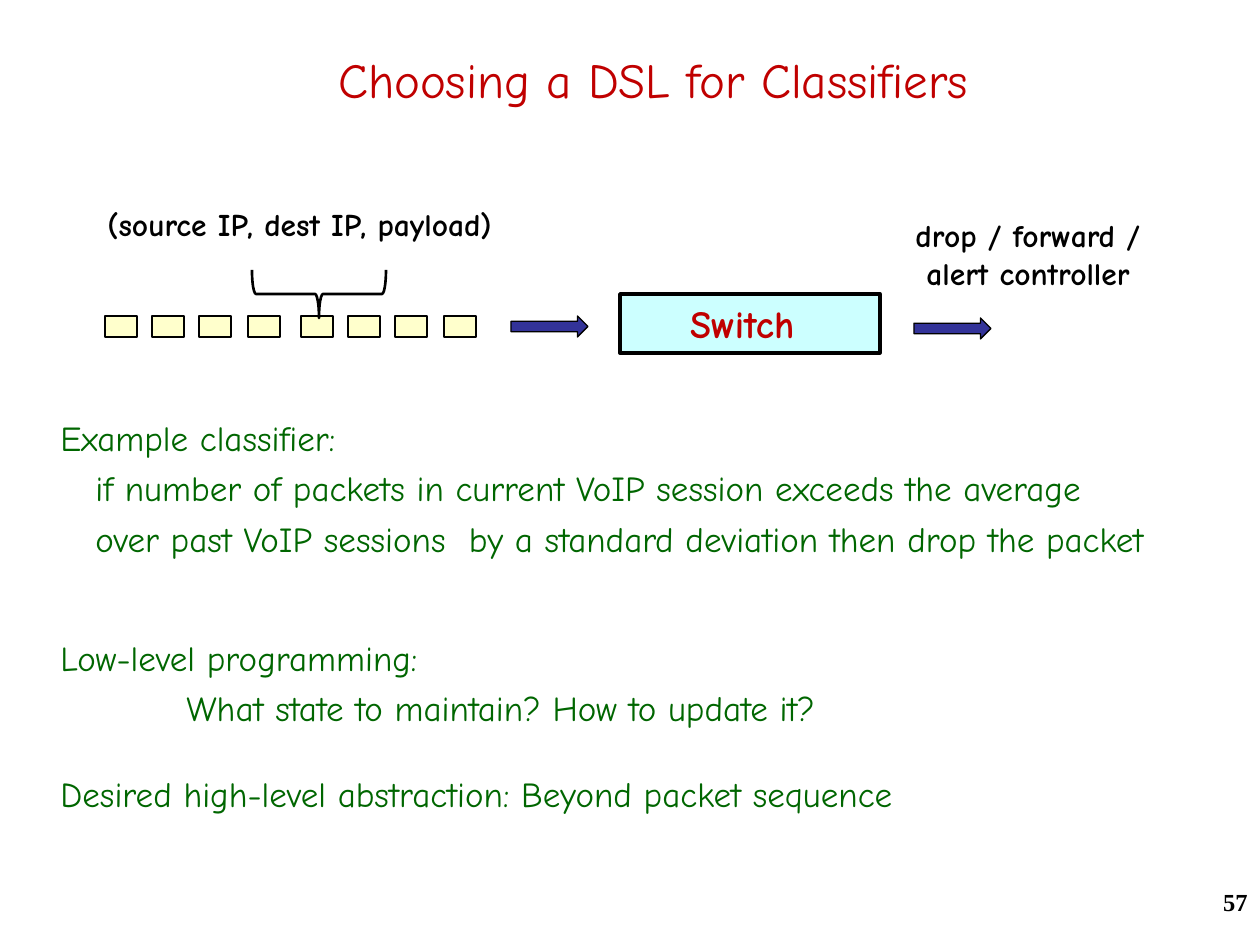
from dataclasses import dataclass
from typing import Any

from pptx import Presentation
from pptx.dml.color import RGBColor
from pptx.enum.shapes import MSO_SHAPE as Preset
from pptx.enum.text import MSO_ANCHOR as Anchor, PP_ALIGN as Align
from pptx.util import Emu, Pt

EMU_PER_PX = 914400 / 126


@dataclass(frozen=True)
class Theme:
    hand: str = "Comic Neue"
    serif: str = "Times New Roman"
    red: str = "C00000"
    green: str = "006600"
    black: str = "000000"
    cyan: str = "CCFFFF"
    yellow: str = "FFFFCC"
    blue: str = "333399"
    title_size: int = 28
    switch_size: int = 22
    body_size: int = 20
    label_size: int = 18
    number_size: int = 14


THEME = Theme()


@dataclass(frozen=True)
class Box:
    left: int
    top: int
    width: int
    height: int


@dataclass(frozen=True)
class Style:
    size: int
    color: str
    bold: bool = False
    font: str = THEME.hand
    align: Align = Align.LEFT
    space_before: int = 0


@dataclass(frozen=True)
class Line:
    text: str
    indent: int = 0


@dataclass(frozen=True)
class TextBlock:
    box: Box
    style: Style
    lines: tuple[Line, ...]
    frame_format: dict[str, Any]


@dataclass(frozen=True)
class Figure:
    preset: Preset
    box: Box
    fill: str | None
    line_width: float = 0.75
    rotation: int = 0


def px(length: int) -> Emu:
    return Emu(round(length * EMU_PER_PX))


def place(box: Box) -> tuple[Emu, ...]:
    return px(box.left), px(box.top), px(box.width), px(box.height)


def apply(target: Any, values: dict[str, Any]) -> None:
    for name, value in values.items():
        setattr(target, name, value)


def write(frame: Any, lines: tuple[Line, ...], style: Style) -> None:
    for index, line in enumerate(lines):
        paragraph = frame.paragraphs[0] if index == 0 else frame.add_paragraph()
        apply(paragraph, {
            "text": line.text,
            "alignment": style.align,
            "space_before": Pt(style.space_before),
        })
        if line.indent:
            paragraph._p.get_or_add_pPr().set("marL", str(px(line.indent)))
        font = paragraph.runs[0].font
        apply(font, {"size": Pt(style.size), "bold": style.bold, "name": style.font})
        font.color.rgb = RGBColor.from_string(style.color)


def draw_text(slide: Any, block: TextBlock) -> None:
    frame = slide.shapes.add_textbox(*place(block.box)).text_frame
    apply(frame, {"word_wrap": True} | block.frame_format)
    write(frame, block.lines, block.style)


def draw_figure(slide: Any, figure: Figure) -> Any:
    shape = slide.shapes.add_shape(figure.preset, *place(figure.box))
    shape.shadow.inherit = False
    shape.rotation = figure.rotation
    if figure.fill:
        shape.fill.solid()
        shape.fill.fore_color.rgb = RGBColor.from_string(figure.fill)
    else:
        shape.fill.background()
    shape.line.width = Pt(figure.line_width)
    shape.line.color.rgb = RGBColor.from_string(THEME.black)
    return shape


TITLE = Style(THEME.title_size, THEME.red, align=Align.CENTER)
SWITCH = Style(THEME.switch_size, THEME.red, bold=True, align=Align.CENTER)
BODY = Style(THEME.body_size, THEME.green, space_before=5)
LABEL = Style(THEME.label_size, THEME.black, bold=True)
NUMBER = Style(THEME.number_size, THEME.black, True, THEME.serif, Align.RIGHT)
NO_WRAP = {"word_wrap": False}

TEXT_BLOCKS = (
    TextBlock(Box(46, 42, 1214, 73), TITLE,
              (Line("Choosing a DSL for Classifiers"),), {"vertical_anchor": Anchor.MIDDLE}),
    TextBlock(Box(998, 881, 262, 63), NUMBER, (Line("57"),), {}),
    TextBlock(Box(95, 199, 447, 50), LABEL,
              (Line("(source IP, dest IP, payload)"),), NO_WRAP),
    TextBlock(Box(903, 210, 285, 89), LABEL,
              (Line("drop / forward /"), Line("alert controller", 11)), NO_WRAP),
    TextBlock(Box(48, 410, 1212, 189), BODY, (
        Line("Example classifier:"),
        Line("if number of packets in current VoIP session exceeds the average", 35),
        Line("over past VoIP sessions  by a standard deviation then drop the packet", 35),
    ), {}),
    TextBlock(Box(48, 630, 1081, 147), BODY, (
        Line("Low-level programming:"),
        Line("What state to maintain? How to update it?", 126),
    ), {}),
    TextBlock(Box(48, 766, 1081, 147), BODY,
              (Line("Desired high-level abstraction: Beyond packet sequence"),), {}),
)

PACKETS = tuple(
    Figure(Preset.RECTANGLE, Box(group + offset, 316, 32, 21), THEME.yellow)
    for group in (105, 301)
    for offset in (0, 47, 94, 143)
)
ARROWS = tuple(
    Figure(Preset.RIGHT_ARROW, Box(left, top, 77, 21), THEME.blue)
    for left, top in ((511, 316), (914, 318))
)
BRACE = Figure(Preset.LEFT_BRACE, Box(295, 227, 48, 134), None, 1.5, 270)
SWITCH_BOX = Figure(Preset.RECTANGLE, Box(620, 294, 260, 59), THEME.cyan, 2)


def main() -> None:
    presentation = Presentation()
    apply(presentation, {"slide_width": px(1260), "slide_height": px(945)})
    slide = presentation.slides.add_slide(presentation.slide_layouts[6])

    switch_frame = draw_figure(slide, SWITCH_BOX).text_frame
    apply(switch_frame, {"vertical_anchor": Anchor.MIDDLE, "margin_right": px(28)})
    write(switch_frame, (Line("Switch"),), SWITCH)

    for figure in (*PACKETS, *ARROWS, BRACE):
        draw_figure(slide, figure)
    for block in TEXT_BLOCKS:
        draw_text(slide, block)

    presentation.save("out.pptx")


if __name__ == "__main__":
    main()
